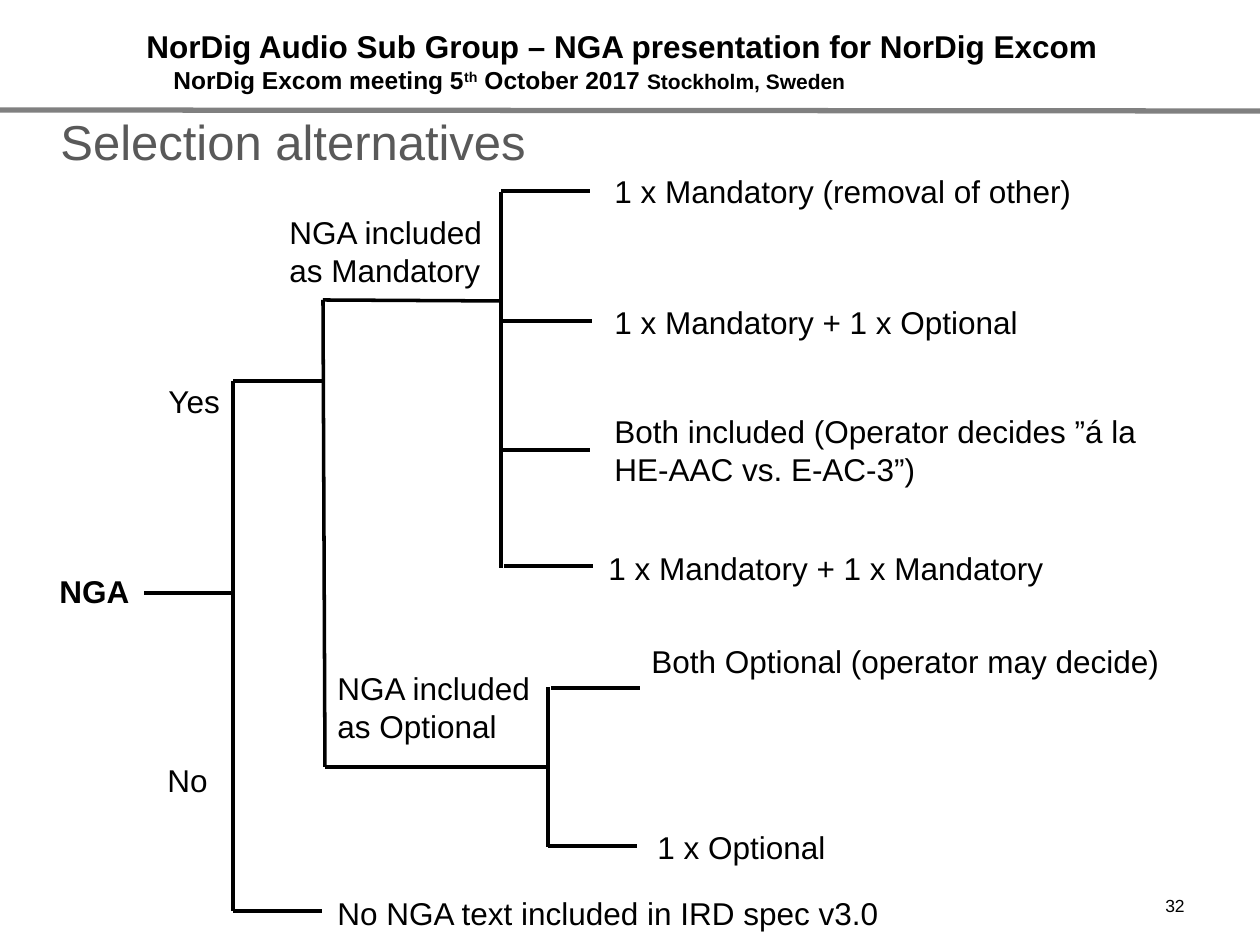
"""Build the slide that shows the NGA selection alternatives as a decision tree."""

from dataclasses import dataclass

from lxml.etree import SubElement
from pptx import Presentation
from pptx.dml.color import RGBColor
from pptx.enum.shapes import MSO_CONNECTOR
from pptx.enum.text import MSO_ANCHOR, PP_ALIGN
from pptx.oxml.ns import qn
from pptx.util import Pt

EMU_PER_PX = 914400 / 126


@dataclass(frozen=True)
class Theme:
    font: str = "Arial"
    black: str = "000000"
    heading: str = "595959"
    rule: str = "808080"
    title_size: int = 18
    subtitle_size: int = 14
    place_size: int = 12
    heading_size: int = 28
    label_size: int = 18
    number_size: int = 10
    rule_width: int = 3
    branch_width: int = 2


THEME = Theme()

SLIDE_SIZE = (1260, 945)
HEADER_BOX = (134, 16, 1063, 90)
SUBTITLE_INDENT = 27
HEADER = [
    [("NorDig Audio Sub Group – NGA presentation for NorDig Excom", THEME.title_size, 0)],
    [
        ("NorDig Excom meeting 5", THEME.subtitle_size, 0),
        ("th", THEME.subtitle_size, 30),
        (" October 2017 ", THEME.subtitle_size, 0),
        ("Stockholm, Sweden", THEME.place_size, 0),
    ],
]
HEADER_RULE = (0, 110, 1260, 111)

SPINES = [
    (233, 381, 233, 911),
    (323, 300, 325, 767),
    (501, 192, 501, 568),
    (548, 687, 548, 847),
]
STEMS = [
    (233, 593, 144, 593),
    (501, 301, 323, 300),
    (548, 767, 325, 767),
]
BRANCH_LENGTH = 89
BRANCH_STARTS = [
    (233, 381), (233, 911),
    (501, 191), (503, 321), (501, 450), (504, 566),
    (551, 688), (548, 846),
]

LINE_HEIGHT = 50
PAIR_HEIGHT = 89
LABELS = [
    ("Yes", 156, 376, 110, LINE_HEIGHT),
    ("No", 155, 755, 110, LINE_HEIGHT),
    ("No NGA text included in IRD spec v3.0", 325, 888, 727, LINE_HEIGHT),
    ("NGA included as Mandatory", 277, 207, 224, PAIR_HEIGHT),
    ("NGA included as Optional", 325, 663, 224, PAIR_HEIGHT),
    ("1 x Mandatory (removal of other)", 602, 166, 494, LINE_HEIGHT),
    ("1 x Mandatory + 1 x Optional", 602, 297, 553, LINE_HEIGHT),
    ("Both included (Operator decides ”á la HE-AAC vs. E-AC-3”)", 602, 406, 563, PAIR_HEIGHT),
    ("1 x Mandatory + 1 x Mandatory", 596, 543, 553, LINE_HEIGHT),
    ("Both Optional (operator may decide)", 639, 636, 576, LINE_HEIGHT),
    ("1 x Optional", 645, 822, 257, LINE_HEIGHT),
]


def px(length):
    return round(length * EMU_PER_PX)


def add_run(paragraph, text, size=THEME.label_size, color=THEME.black, bold=False, baseline=0):
    run = paragraph.add_run()
    run.text = text
    run.font.name = THEME.font
    run.font.size = Pt(size)
    run.font.bold = bold
    run.font.color.rgb = RGBColor.from_string(color)
    if baseline:
        run.font._element.set("baseline", str(baseline * 1000))


def add_text(slide, text, box, align=PP_ALIGN.LEFT, line_spacing=None, **run_format):
    frame = slide.shapes.add_textbox(*map(px, box)).text_frame
    frame.word_wrap = True
    paragraph = frame.paragraphs[0]
    paragraph.alignment = align
    if line_spacing:
        paragraph.line_spacing = line_spacing
    add_run(paragraph, text, **run_format)


def add_header(slide):
    frame = slide.shapes.add_textbox(*map(px, HEADER_BOX)).text_frame
    frame.word_wrap = True
    frame.vertical_anchor = MSO_ANCHOR.MIDDLE
    title = frame.paragraphs[0]
    subtitle = frame.add_paragraph()
    subtitle._p.get_or_add_pPr().set("marL", str(px(SUBTITLE_INDENT)))
    for paragraph, runs in zip((title, subtitle), HEADER):
        for text, size, baseline in runs:
            add_run(paragraph, text, size=size, bold=True, baseline=baseline)


def add_line(slide, ends, color=THEME.black, width=THEME.branch_width):
    line = slide.shapes.add_connector(MSO_CONNECTOR.STRAIGHT, *map(px, ends))
    line.line.color.rgb = RGBColor.from_string(color)
    line.line.width = Pt(width)
    SubElement(line._element.spPr, qn("a:effectLst"))


def main():
    presentation = Presentation()
    presentation.slide_width, presentation.slide_height = map(px, SLIDE_SIZE)
    slide = presentation.slides.add_slide(presentation.slide_layouts[6])

    add_line(slide, HEADER_RULE, color=THEME.rule, width=THEME.rule_width)
    add_header(slide)
    add_text(slide, "Selection alternatives", (48, 112, 953, 77), line_spacing=0.9,
             size=THEME.heading_size, color=THEME.heading)

    branches = [(x + BRANCH_LENGTH, y, x, y) for x, y in BRANCH_STARTS]
    for ends in SPINES + STEMS + branches:
        add_line(slide, ends)

    add_text(slide, "NGA", (47, 566, 110, LINE_HEIGHT), bold=True)
    for text, *box in LABELS:
        add_text(slide, text, box)
    add_text(slide, "32", (903, 889, 294, 37), align=PP_ALIGN.RIGHT, size=THEME.number_size)

    presentation.save("out.pptx")


if __name__ == "__main__":
    main()
